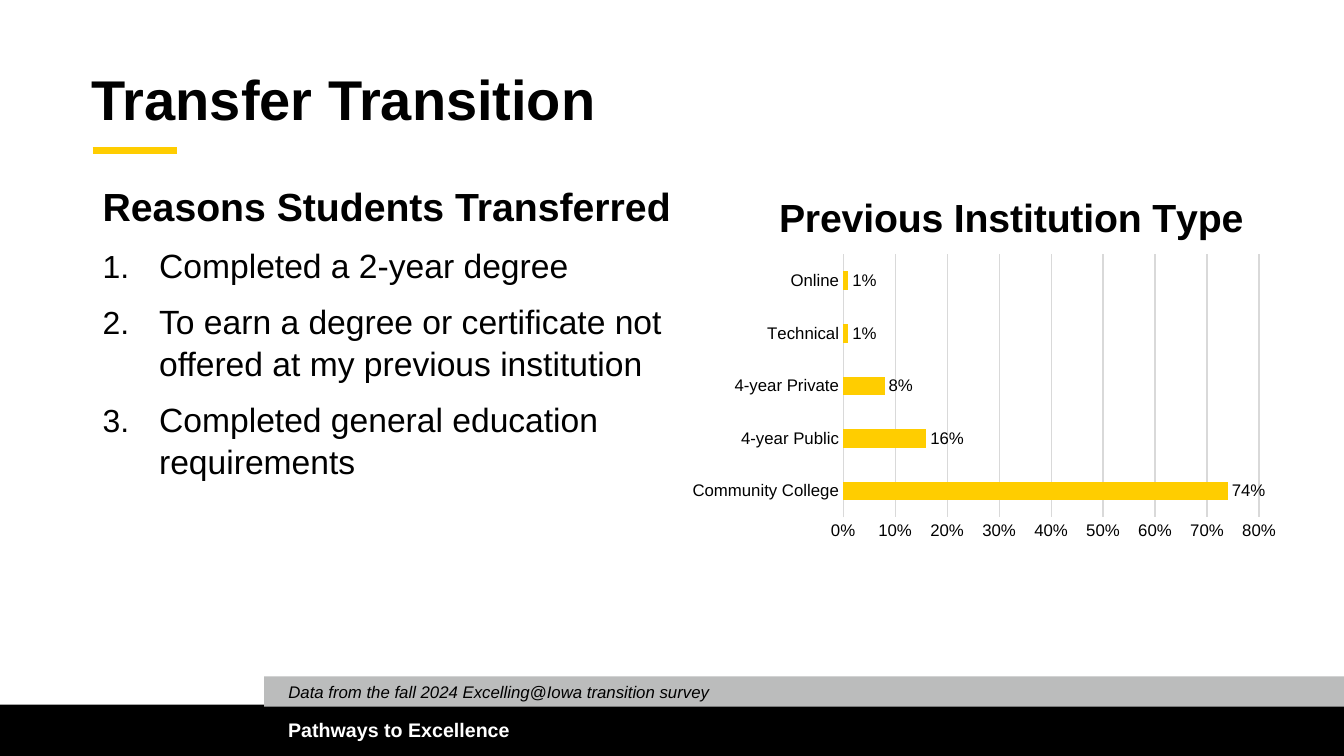
from dataclasses import dataclass
from typing import Any

from lxml import etree
from pptx import Presentation
from pptx.chart.data import CategoryChartData
from pptx.dml.color import RGBColor
from pptx.enum.chart import XL_CHART_TYPE, XL_LABEL_POSITION, XL_TICK_MARK
from pptx.enum.shapes import MSO_CONNECTOR, MSO_SHAPE
from pptx.enum.text import MSO_ANCHOR, PP_ALIGN
from pptx.oxml import parse_xml
from pptx.oxml.ns import nsdecls, qn
from pptx.util import Inches, Pt

BAR_CLUSTERED = XL_CHART_TYPE.BAR_CLUSTERED
OUTSIDE_END = XL_LABEL_POSITION.OUTSIDE_END
NO_TICK = XL_TICK_MARK.NONE
STRAIGHT = MSO_CONNECTOR.STRAIGHT
RECTANGLE = MSO_SHAPE.RECTANGLE
MIDDLE = MSO_ANCHOR.MIDDLE
TOP = MSO_ANCHOR.TOP
LEFT = PP_ALIGN.LEFT

COLORS = {
    "black": "000000",
    "white": "FFFFFF",
    "gold": "FFCD00",
    "gray": "BBBCBC",
    "grid": "D9D9D9",
}
FONT_NAME = "Arial"


@dataclass(frozen=True)
class Box:
    left: float
    top: float
    width: float
    height: float

    def lengths(self) -> tuple:
        return tuple(Inches(v) for v in (self.left, self.top, self.width, self.height))


@dataclass(frozen=True)
class Line:
    text: str
    size: float
    color: str = "black"
    bold: bool = False
    italic: bool = False
    numbered: bool = False


@dataclass(frozen=True)
class Band:
    box: Box
    color: str


BLACK_BAND = Band(Box(0, 6.99, 13.33, 0.51), "black")
GRAY_BAND = Band(Box(2.62, 6.71, 10.73, 0.3), "gray")
TITLE_BOX = Box(0.81, 0.54, 11.5, 0.95)
FOOTER_BOX = Box(2.76, 7.04, 9.5, 0.4)
REASONS_BOX = Box(0.92, 1.74, 6.48, 4.8)
CHART_BOX = Box(6.75, 1.66, 6.04, 3.76)

REASONS = [
    Line("Reasons Students Transferred", 28, bold=True),
    Line("Completed a 2-year degree", 24, numbered=True),
    Line("To earn a degree or certificate not offered at my previous institution", 24, numbered=True),
    Line("Completed general education requirements", 24, numbered=True),
]
INSTITUTIONS = {
    "Community College": 0.74,
    "4-year Public": 0.16,
    "4-year Private": 0.08,
    "Technical": 0.01,
    "Online": 0.01,
}


def rgb(name: str) -> RGBColor:
    return RGBColor.from_string(COLORS[name])


def set_attributes(target: Any, values: dict) -> None:
    for name, value in values.items():
        setattr(target, name, value)


def format_font(font: Any, size: float, color: str = "black", bold: bool = False, italic: bool = False) -> None:
    set_attributes(font, {"name": FONT_NAME, "size": Pt(size), "bold": bold, "italic": italic})
    font.color.rgb = rgb(color)


def add_numbering(paragraph: Any) -> None:
    properties = paragraph._p.get_or_add_pPr()
    properties.set("marL", str(Inches(0.56)))
    properties.set("indent", str(-Inches(0.56)))
    etree.SubElement(properties, qn("a:buSzPct"), val="95000")
    etree.SubElement(properties, qn("a:buAutoNum"), type="arabicPeriod")


def write_lines(shape: Any, lines: list[Line], anchor: Any = MIDDLE,
                line_spacing: float = 1.0, left_inset: float = 0.1) -> None:
    frame = shape.text_frame
    set_attributes(frame, {
        "word_wrap": True, "vertical_anchor": anchor, "margin_left": Inches(left_inset),
    })
    for index, line in enumerate(lines):
        paragraph = frame.add_paragraph() if index else frame.paragraphs[0]
        paragraph.text = line.text
        set_attributes(paragraph, {
            "alignment": LEFT,
            "line_spacing": line_spacing,
            "space_before": Pt(10 if index else 0),
        })
        if line.numbered:
            add_numbering(paragraph)
        format_font(paragraph.font, line.size, line.color, line.bold, line.italic)


def add_band(slide: Any, band: Band) -> Any:
    shape = slide.shapes.add_shape(RECTANGLE, *band.box.lengths())
    shape.shadow.inherit = False
    shape.fill.solid()
    shape.fill.fore_color.rgb = rgb(band.color)
    shape.line.fill.background()
    return shape


def add_title_rule(slide: Any) -> None:
    rule = slide.shapes.add_connector(STRAIGHT, Inches(0.92), Inches(1.49), Inches(1.76), Inches(1.49))
    rule.line.color.rgb = rgb("gold")
    rule.line.width = Pt(5)
    etree.SubElement(rule._element.spPr, qn("a:effectLst"))


def manual_layout(values: dict[str, float], inner: bool = False) -> Any:
    target = '<c:layoutTarget val="inner"/>' if inner else ""
    modes = "".join(f'<c:{axis}Mode val="edge"/>' for axis in "xy")
    numbers = "".join(f'<c:{name} val="{value}"/>' for name, value in values.items())
    return parse_xml(
        f'<c:layout {nsdecls("c")}><c:manualLayout>{target}{modes}{numbers}</c:manualLayout></c:layout>'
    )


def place_layout(parent: Any, layout: Any, position: int) -> None:
    for existing in parent.findall(qn("c:layout")):
        parent.remove(existing)
    parent.insert(position, layout)


def add_institution_chart(slide: Any) -> None:
    data = CategoryChartData(number_format="0%")
    data.categories = list(INSTITUTIONS)
    data.add_series("Series 1", list(INSTITUTIONS.values()))
    chart = slide.shapes.add_chart(BAR_CLUSTERED, *CHART_BOX.lengths(), data).chart
    format_font(chart.font, 10)
    set_attributes(chart, {"has_legend": False, "has_title": True})

    heading = chart.chart_title.text_frame.paragraphs[0]
    heading_run = heading.add_run()
    heading_run.text = "Previous Institution Type"
    format_font(heading_run.font, 28, bold=True)
    chart.chart_title.include_in_layout = False
    place_layout(chart.chart_title._element, manual_layout({"x": 0.15, "y": 0.05}), 1)
    plot_layout = manual_layout({"x": 0.267, "y": 0.23, "w": 0.683, "h": 0.694}, inner=True)
    place_layout(chart._chartSpace.chart.plotArea, plot_layout, 0)

    for axis in (chart.category_axis, chart.value_axis):
        set_attributes(axis, {"major_tick_mark": NO_TICK, "minor_tick_mark": NO_TICK})
        format_font(axis.tick_labels.font, 12)
    value_axis = chart.value_axis
    set_attributes(value_axis, {
        "minimum_scale": 0, "maximum_scale": 0.8, "major_unit": 0.1, "has_major_gridlines": True,
    })
    set_attributes(value_axis.tick_labels, {"number_format": "0%", "number_format_is_linked": False})
    value_axis.format.line.fill.background()
    for line in (chart.category_axis.format.line, value_axis.major_gridlines.format.line):
        line.color.rgb = rgb("grid")
        line.width = Pt(0.75)

    plot = chart.plots[0]
    set_attributes(plot, {"gap_width": 182, "vary_by_categories": False, "has_data_labels": True})
    set_attributes(plot.data_labels, {
        "show_value": True, "position": OUTSIDE_END,
        "number_format": "0%", "number_format_is_linked": False,
    })
    format_font(plot.data_labels.font, 12)
    fill = plot.series[0].format.fill
    fill.solid()
    fill.fore_color.rgb = rgb("gold")


def main() -> None:
    presentation = Presentation()
    set_attributes(presentation, {"slide_width": Inches(13.33), "slide_height": Inches(7.5)})
    slide = presentation.slides.add_slide(presentation.slide_layouts[5])
    add_band(slide, BLACK_BAND)
    add_title_rule(slide)

    title = slide.shapes.title
    set_attributes(title, dict(zip(("left", "top", "width", "height"), TITLE_BOX.lengths())))
    write_lines(title, [Line("Transfer Transition", 40, bold=True)], line_spacing=0.9)

    add_institution_chart(slide)
    footer = slide.shapes.add_textbox(*FOOTER_BOX.lengths())
    write_lines(footer, [Line("Pathways to Excellence", 14, "white", bold=True)])
    reasons = slide.shapes.add_textbox(*REASONS_BOX.lengths())
    write_lines(reasons, REASONS, TOP, line_spacing=1.04)
    source = Line("Data from the fall 2024 Excelling@Iowa transition survey", 12, italic=True)
    write_lines(add_band(slide, GRAY_BAND), [source], left_inset=0.24)
    presentation.save("out.pptx")


if __name__ == "__main__":
    main()
